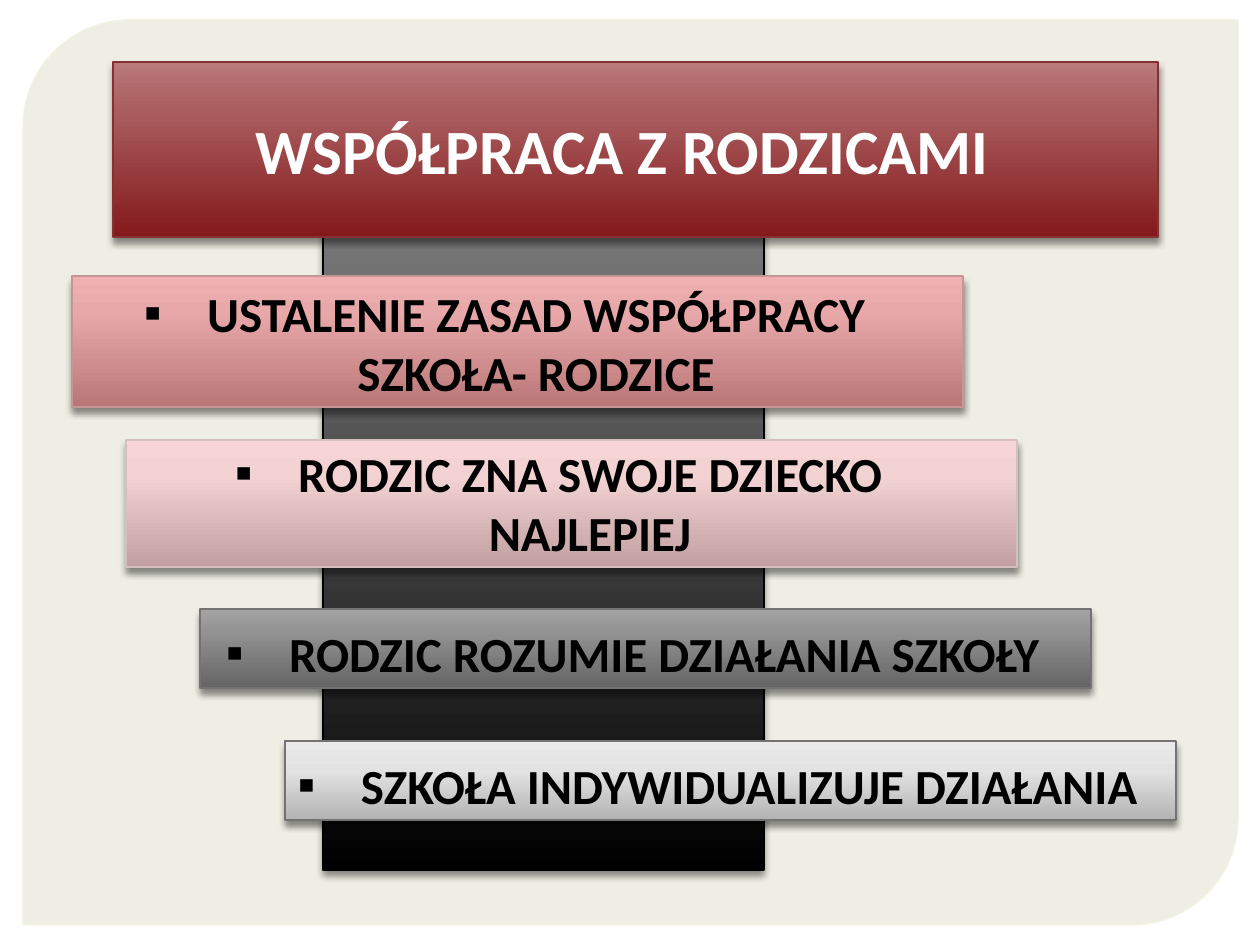
from lxml.etree import SubElement
from pptx import Presentation
from pptx.dml.color import RGBColor
from pptx.enum.shapes import MSO_SHAPE
from pptx.enum.text import MSO_ANCHOR, MSO_AUTO_SIZE, PP_ALIGN
from pptx.oxml.ns import qn
from pptx.util import Emu, Pt

EMU_PER_PX = 914400 / 126
COLOURS = {
    "panel": "E5E6D7", "panel_edge": "F2F4E2",
    "white": "FFFFFF", "black": "000000",
}
GRADIENTS = {
    "column": ("000000", "5E5E5E", "7F7F7F", "000000", 72),
    "title": ("83191B", "AA5D5F", "B9797A", "833133", 72),
    "rose": ("B97678", "E8A8A9", "EFB0B1", "C89596", 72),
    "blush": ("C19FA1", "F3D2D3", "F7D5D6", "D7BEBF", 72),
    "grey": ("646464", "939393", "A4A4A4", "737373", 72),
    "silver": ("B3B3B3", "E2E2E2", "EAEAEA", "737373", 62),
}
BARS = [
    ("USTALENIE ZASAD WSPÓŁPRACY SZKOŁA- RODZICE", "rose", (72, 276, 891, 131)),
    ("RODZIC ZNA SWOJE DZIECKO NAJLEPIEJ", "blush", (126, 440, 891, 127)),
    ("RODZIC ROZUMIE DZIAŁANIA SZKOŁY", "grey", (200, 609, 891, 79)),
    ("SZKOŁA INDYWIDUALIZUJE DZIAŁANIA", "silver", (285, 741, 891, 79)),
]


def px(length):
    return Emu(round(length * EMU_PER_PX))


def apply(target, values):
    for name, value in values.items():
        setattr(target, name, value)


def add_colour(parent, colour, alpha=None):
    node = SubElement(parent, qn("a:srgbClr"), val=colour)
    if alpha is not None:
        SubElement(node, qn("a:alpha"), val=str(alpha * 1000))


class BarSlide:
    frame_format = {
        "word_wrap": True, "auto_size": MSO_AUTO_SIZE.NONE,
        "margin_left": px(6), "margin_top": px(6),
        "margin_right": px(32), "margin_bottom": px(6),
    }
    paragraph_format = {
        "alignment": PP_ALIGN.CENTER, "line_spacing": 1.0,
        "space_before": Pt(0), "space_after": Pt(0),
    }
    font_format = {"name": "Calibri", "bold": True}

    def __init__(self, slide):
        self.slide = slide

    def place(self, element, box):
        apply(element, dict(zip(("left", "top", "width", "height"), map(px, box))))

    def send_back(self, element, depth):
        self.slide.shapes._spTree.insert(2 + depth, element._element)

    def paint(self, element, gradient):
        *stops, edge, middle = GRADIENTS[gradient]
        element.fill.gradient()
        properties = element._element.spPr
        stop_list = properties.find(".//" + qn("a:gsLst"))
        for stop in list(stop_list):
            stop_list.remove(stop)
        for position, colour in zip((0, middle, 100), stops):
            add_colour(SubElement(stop_list, qn("a:gs"), pos=str(position * 1000)), colour)
        properties.find(".//" + qn("a:lin")).set("ang", "16200000")
        element.line.color.rgb = RGBColor.from_string(edge)
        element.line.width = Pt(0.75)
        element.shadow.inherit = False
        shadow = SubElement(
            properties.find(qn("a:effectLst")), qn("a:outerShdw"),
            blurRad=str(Pt(4)), dist=str(Pt(3)), dir="5400000", rotWithShape="0")
        add_colour(shadow, COLOURS["black"], 43)

    def panel(self, box):
        panel = self.slide.shapes.add_shape(
            MSO_SHAPE.ROUND_2_DIAG_RECTANGLE, *map(px, box))
        panel.adjustments[0] = 0.118
        panel.adjustments[1] = 0
        panel.shadow.inherit = False
        panel.line.width = Pt(0.87)
        for fill, name, alpha in ((panel.fill, "panel", 65), (panel.line.fill, "panel_edge", 88)):
            fill.solid()
            fill.fore_color.rgb = RGBColor.from_string(COLOURS[name])
        for tint, alpha in zip(panel._element.spPr.iter(qn("a:srgbClr")), (65, 88)):
            SubElement(tint, qn("a:alpha"), val=str(alpha * 1000))
        self.send_back(panel, 0)

    def column(self, box):
        column = self.slide.shapes.add_shape(MSO_SHAPE.RECTANGLE, *map(px, box))
        self.paint(column, "column")
        self.send_back(column, 1)

    def text_bar(self, holder, wording, gradient, box, size, colour, anchor):
        self.place(holder, box)
        self.paint(holder, gradient)
        frame = holder.text_frame
        frame.text = wording
        apply(frame, {**self.frame_format, "vertical_anchor": anchor})
        paragraph = frame.paragraphs[0]
        apply(paragraph, self.paragraph_format)
        font = paragraph.runs[0].font
        apply(font, {**self.font_format, "size": Pt(size)})
        font.color.rgb = RGBColor.from_string(COLOURS[colour])
        return paragraph

    def title(self, wording, box):
        self.text_bar(self.slide.shapes.title, wording, "title", box,
                      36, "white", MSO_ANCHOR.MIDDLE)

    def bullet(self, holder, wording, gradient, box):
        paragraph = self.text_bar(holder, wording, gradient, box,
                                  28, "black", MSO_ANCHOR.BOTTOM)
        properties = paragraph._p.get_or_add_pPr()
        properties.set("marL", str(px(63)))
        properties.set("indent", str(-px(63)))
        SubElement(properties, qn("a:buFont"), typeface="Calibri")
        SubElement(properties, qn("a:buChar"), char="▪")


def main():
    presentation = Presentation()
    apply(presentation, {"slide_width": px(1260), "slide_height": px(945)})
    comparison = presentation.slide_layouts.get_by_name("Comparison")
    slide = presentation.slides.add_slide(comparison)
    page = BarSlide(slide)
    page.panel((23, 20, 1215, 905))
    page.column((323, 192, 441, 678))
    page.title("WSPÓŁPRACA Z RODZICAMI", (113, 62, 1045, 175))
    bodies = list(slide.placeholders)[1:]
    for holder, (wording, gradient, box) in zip(bodies, BARS):
        page.bullet(holder, wording, gradient, box)
    presentation.save("out.pptx")


if __name__ == "__main__":
    main()
